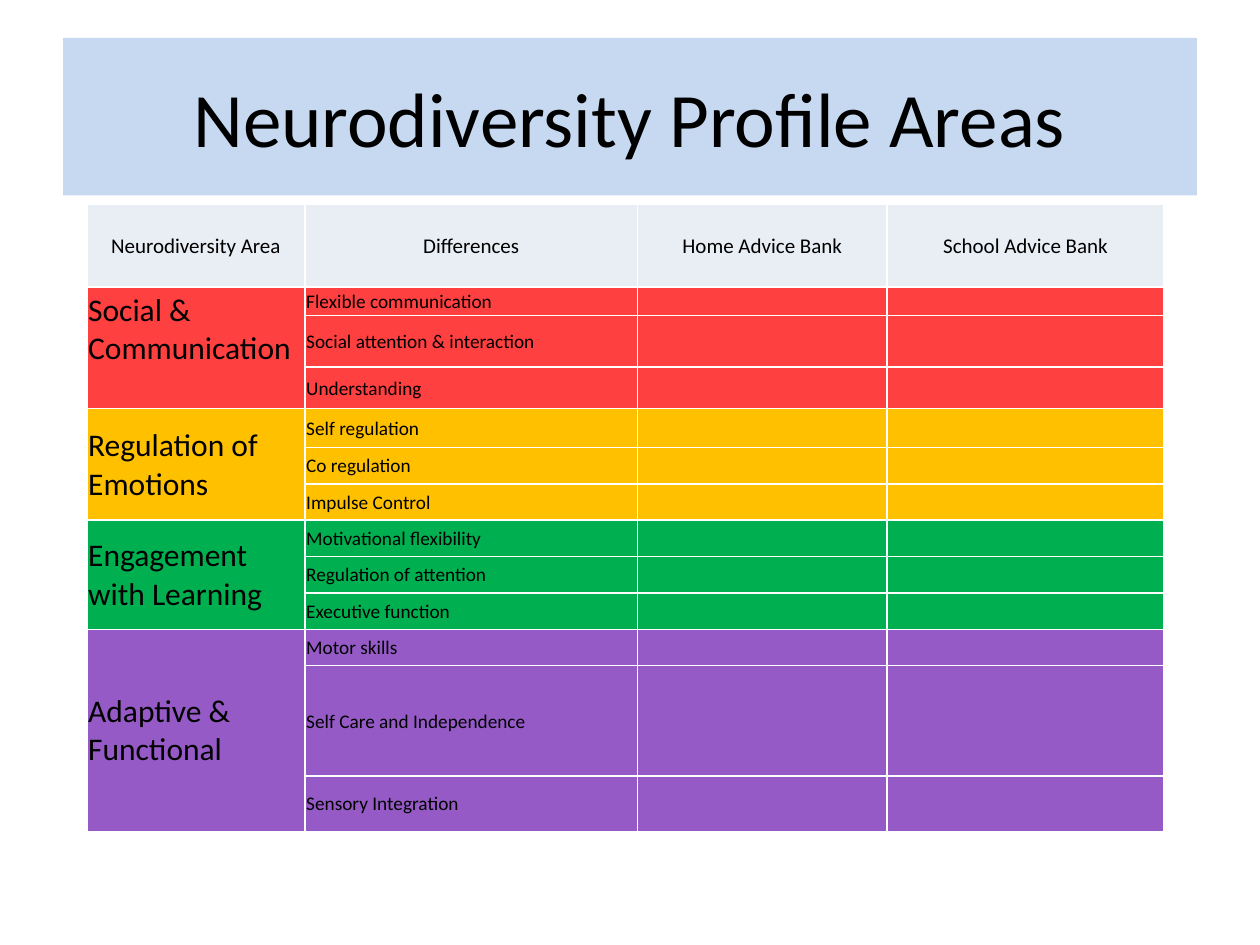
from lxml import etree
from pptx import Presentation
from pptx.dml.color import RGBColor
from pptx.enum.text import MSO_ANCHOR, PP_ALIGN
from pptx.oxml.ns import qn
from pptx.util import Inches, Pt

MIDDLE = MSO_ANCHOR.MIDDLE
CENTER, LEFT = PP_ALIGN.CENTER, PP_ALIGN.LEFT
FONT = "Calibri"
COLORS = {
    "text": "000000", "line": "FFFFFF", "title": "C6D9F1", "head": "E9EDF4",
    "red": "FF0000", "gold": "FFC000", "green": "00B050", "purple": "955AC6",
}
HEADS = ["Neurodiversity Area", "Differences", "Home Advice Bank", "School Advice Bank"]
AREAS = [
    ("Social & Communication", "red",
     ["Flexible communication", "Social attention & interaction", "Understanding"]),
    ("Regulation of Emotions", "gold",
     ["Self regulation", "Co regulation", "Impulse Control"]),
    ("Engagement with Learning", "green",
     ["Motivational flexibility", "Regulation of attention", "Executive function"]),
    ("Adaptive & Functional", "purple",
     ["Motor skills", "Self Care and Independence", "Sensory Integration"]),
]
WIDTHS = [1.73, 2.64, 1.98, 2.2]
HEIGHTS = [0.66, 0.23, 0.41, 0.33, 0.31] + [0.29] * 6 + [0.88, 0.44]


def color(name):
    """Return the named colour."""
    return RGBColor.from_string(COLORS[name])


def write(frame, text, size, align):
    """Set one paragraph of text and its look."""
    frame.text = text
    line = frame.paragraphs[0]
    line.alignment = align
    for run in line.runs:
        run.font.name, run.font.size = FONT, Pt(size)
        run.font.color.rgb = color("text")
    if not text:
        etree.SubElement(line._p, qn("a:endParaRPr"), sz=str(size * 100))


def edge(cell):
    """Draw thin lines on all four sides of a cell."""
    props = cell._tc.get_or_add_tcPr()
    for spot, side in enumerate(("lnL", "lnR", "lnT", "lnB")):
        line = etree.Element(qn(f"a:{side}"), w=str(Pt(1)))
        fill = etree.SubElement(line, qn("a:solidFill"))
        etree.SubElement(fill, qn("a:srgbClr"), val=COLORS["line"])
        props.insert(spot, line)


def style(cell, text, size, fill, align=LEFT):
    """Fill a cell, set its margins and write its text."""
    cell.margin_left = cell.margin_right = cell.margin_top = Inches(0.01)
    cell.margin_bottom = 0
    cell.vertical_anchor = MIDDLE
    cell.fill.solid()
    cell.fill.fore_color.rgb = color(fill)
    if fill == "red":
        tint = cell._tc.tcPr.find(".//" + qn("a:srgbClr"))
        etree.SubElement(tint, qn("a:alpha"), val="75000")
    edge(cell)
    write(cell.text_frame, text, size, align)


def add_title(slide, left, top, width, height):
    """Place the title band in its box."""
    title = slide.shapes.title
    title.left, title.top, title.width, title.height = left, top, width, height
    title.fill.solid()
    title.fill.fore_color.rgb = color("title")
    title.text_frame.vertical_anchor = MIDDLE
    write(title.text_frame, "Neurodiversity Profile Areas", 44, CENTER)


def add_grid(slide, left, top, width, height):
    """Place the table of areas in its box."""
    table = slide.shapes.add_table(
        len(HEIGHTS), len(WIDTHS), left, top, width, height).table
    table.first_row = table.horz_banding = False
    for col, size in zip(table.columns, WIDTHS):
        col.width = int(width * size / sum(WIDTHS))
    for row, size in zip(table.rows, HEIGHTS):
        row.height = int(height * size / sum(HEIGHTS))
    for col, head in enumerate(HEADS):
        style(table.cell(0, col), head, 12, "head", CENTER)
    row = 1
    for area, fill, items in AREAS:
        for step, item in enumerate(items):
            texts = ["" if step else area, item, "", ""]
            for col, text in enumerate(texts):
                size = 18 if text == area else 11
                style(table.cell(row + step, col), text, size, fill)
        table.cell(row, 0).merge(table.cell(row + len(items) - 1, 0))
        row += len(items)
    table.cell(1, 0).margin_bottom = Inches(0.3)


def main():
    """Build the slide and save it."""
    deck = Presentation()
    deck.slide_width, deck.slide_height = Inches(10), Inches(7.5)
    slide = deck.slides.add_slide(deck.slide_layouts[5])
    add_title(slide, Inches(0.5), Inches(0.3), Inches(9), Inches(1.25))
    add_grid(slide, Inches(0.69), Inches(1.62), Inches(8.55), Inches(4.98))
    deck.save("out.pptx")


if __name__ == "__main__":
    main()
